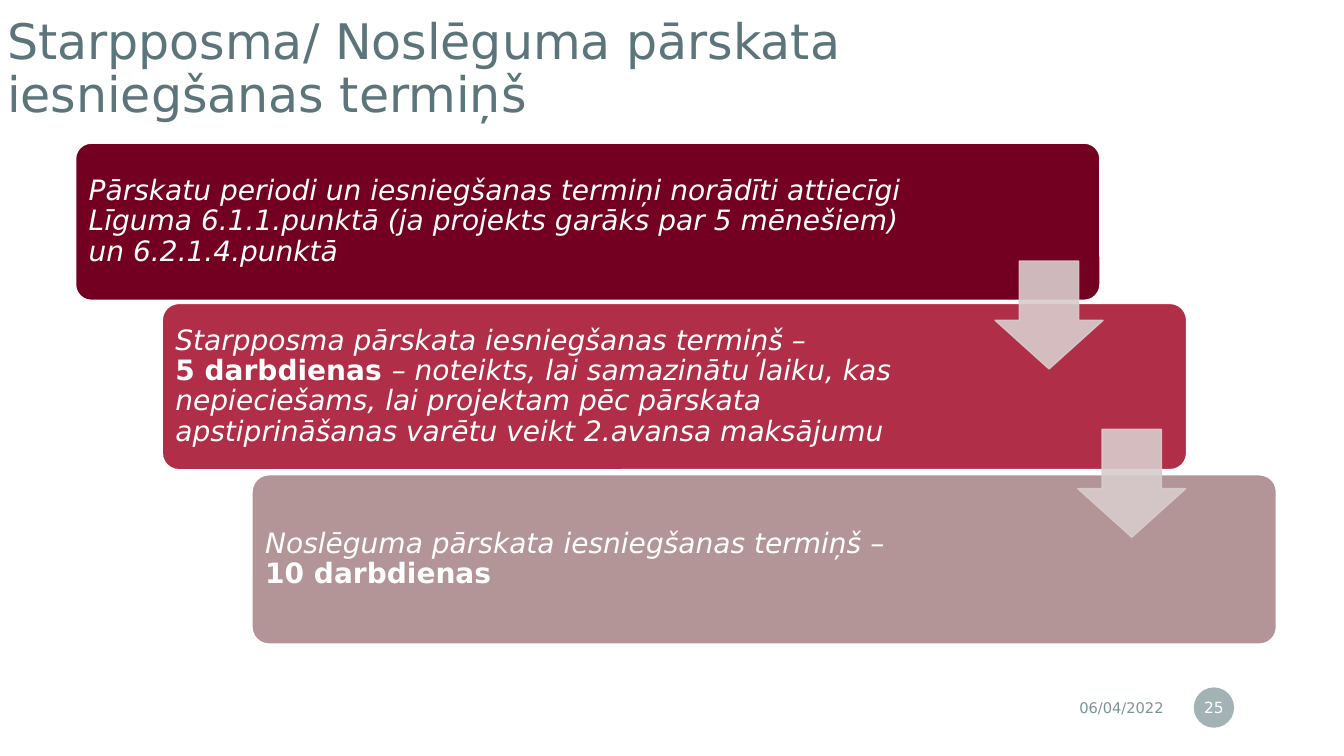
from pptx import Presentation
from pptx.dml.color import RGBColor as Rgb
from pptx.enum.shapes import MSO_SHAPE as Kind
from pptx.enum.text import MSO_ANCHOR as Anchor, MSO_AUTO_SIZE as Auto, PP_ALIGN as Align
from pptx.oxml.ns import qn
from pptx.util import Inches, Pt
from lxml.etree import SubElement

FONT = "DejaVu Sans"
HUES = {"title": "5B757A", "date": "7C9396", "white": "FFFFFF", "dark": "740021",
        "red": "B02E47", "rose": "B39598", "arrow": "D8CCCD"}
STEPS = [
    ((0.75, 1.42, 10.16, 1.56), "dark", 8.38, [
        [("Pārskatu periodi un iesniegšanas termiņi norādīti attiecīgi Līguma "
          "6.1.1.punktā (ja projekts garāks par 5 mēnešiem) un 6.2.1.4.punktā", False)]]),
    ((1.61, 3.01, 10.16, 1.65), "red", 8.09, [
        [("Starpposma pārskata iesniegšanas termiņš –", False)],
        [("5 darbdienas ", True),
         ("– noteikts, lai samazinātu laiku, kas nepieciešams, lai projektam pēc "
          "pārskata apstiprināšanas varētu veikt 2.avansa maksājumu", False)]]),
    ((2.5, 4.71, 10.16, 1.68), "rose", 8.09, [
        [("Noslēguma pārskata iesniegšanas termiņš –", False)],
        [("10 darbdienas", True)]]),
]
ARROWS = [(9.87, 2.59, 1.07, 1.07), (10.69, 4.26, 1.07, 1.07)]


def paint(fill, hue, alpha=100):
    """Set a solid fill with an opacity in percent."""
    fill.solid()
    fill.fore_color.rgb = Rgb.from_string(HUES[hue])
    if alpha < 100:
        tone = fill._xPr.find(qn("a:solidFill"))[0]
        SubElement(tone, qn("a:alpha")).set("val", str(alpha * 1000))


def shape(slide, kind, box, hue, alpha=100, edge=None):
    """Add a flat preset shape, with a one-point edge if given."""
    item = slide.shapes.add_shape(kind, *map(Inches, box))
    item.shadow.inherit = False
    paint(item.fill, hue, alpha)
    if edge:
        item.line.width = Pt(1)
        paint(item.line.fill, edge, alpha)
    else:
        item.line.fill.background()
    return item


def setup(frame, side, top):
    """Wrap and centre a text frame vertically, with equal insets."""
    frame.word_wrap = True
    frame.auto_size = Auto.NONE
    frame.vertical_anchor = Anchor.MIDDLE
    frame.margin_left = frame.margin_right = Inches(side)
    frame.margin_top = frame.margin_bottom = Inches(top)


def write(par, text, size, hue, bold=False, slant=False):
    """Add one formatted run to a paragraph."""
    run = par.add_run()
    run.text = text
    font = run.font
    font.name, font.size = FONT, Pt(size)
    font.bold, font.italic = bold, slant
    font.color.rgb = Rgb.from_string(HUES[hue])


def head(slide, box):
    """Place the slide title."""
    title = slide.shapes.title
    title.left, title.top, title.width, title.height = map(Inches, box)
    setup(title.text_frame, 0.2, 0.2)
    par = title.text_frame.paragraphs[0]
    par.alignment, par.line_spacing = Align.LEFT, 0.9
    write(par, "Starpposma/ Noslēguma pārskata iesniegšanas termiņš", 35, "title")


def step(slide, box, hue, width, pars):
    """Draw one step card with its text inside."""
    left, top, _, height = box
    card = shape(slide, Kind.ROUNDED_RECTANGLE, box, hue, edge="white")
    card.adjustments[0] = 0.1
    area = (left + 0.05, top + 0.05, width, height - 0.1)
    frame = slide.shapes.add_textbox(*map(Inches, area)).text_frame
    setup(frame, 0.08, 0.08)
    for num, runs in enumerate(pars):
        par = frame.add_paragraph() if num else frame.paragraphs[0]
        par.line_spacing = 0.9
        for text, bold in runs:
            write(par, text, 20, "white", bold, not bold)


def arrow(slide, box):
    """Draw a translucent arrow to the next step."""
    item = shape(slide, Kind.DOWN_ARROW, box, "arrow", 90, "arrow")
    item.adjustments[0], item.adjustments[1] = 0.55, 0.45


def foot(slide, box):
    """Place the date and the page badge in the footer."""
    left, top, width, height = box
    area = (left, top + 0.02, 3.01, 0.35)
    date = slide.shapes.add_textbox(*map(Inches, area)).text_frame
    setup(date, 0.1, 0.05)
    date.paragraphs[0].alignment = Align.RIGHT
    write(date.paragraphs[0], "06/04/2022", 10.5, "date")
    spot = (left + width - height, top, height, height)
    badge = shape(slide, Kind.OVAL, spot, "date", 70).text_frame
    setup(badge, 0.02, 0.05)
    badge.paragraphs[0].alignment = Align.CENTER
    write(badge.paragraphs[0], "25", 11, "white")


def main():
    """Build and save the slide."""
    deck = Presentation()
    deck.slide_width, deck.slide_height = Inches(13.33), Inches(7.5)
    slide = deck.slides.add_slide(deck.slide_layouts[5])
    head(slide, (-0.13, 0.1, 11.41, 1.19))
    foot(slide, (8.63, 6.82, 3.61, 0.4))
    for item in STEPS:
        step(slide, *item)
    for box in ARROWS:
        arrow(slide, box)
    deck.save("out.pptx")


if __name__ == "__main__":
    main()
